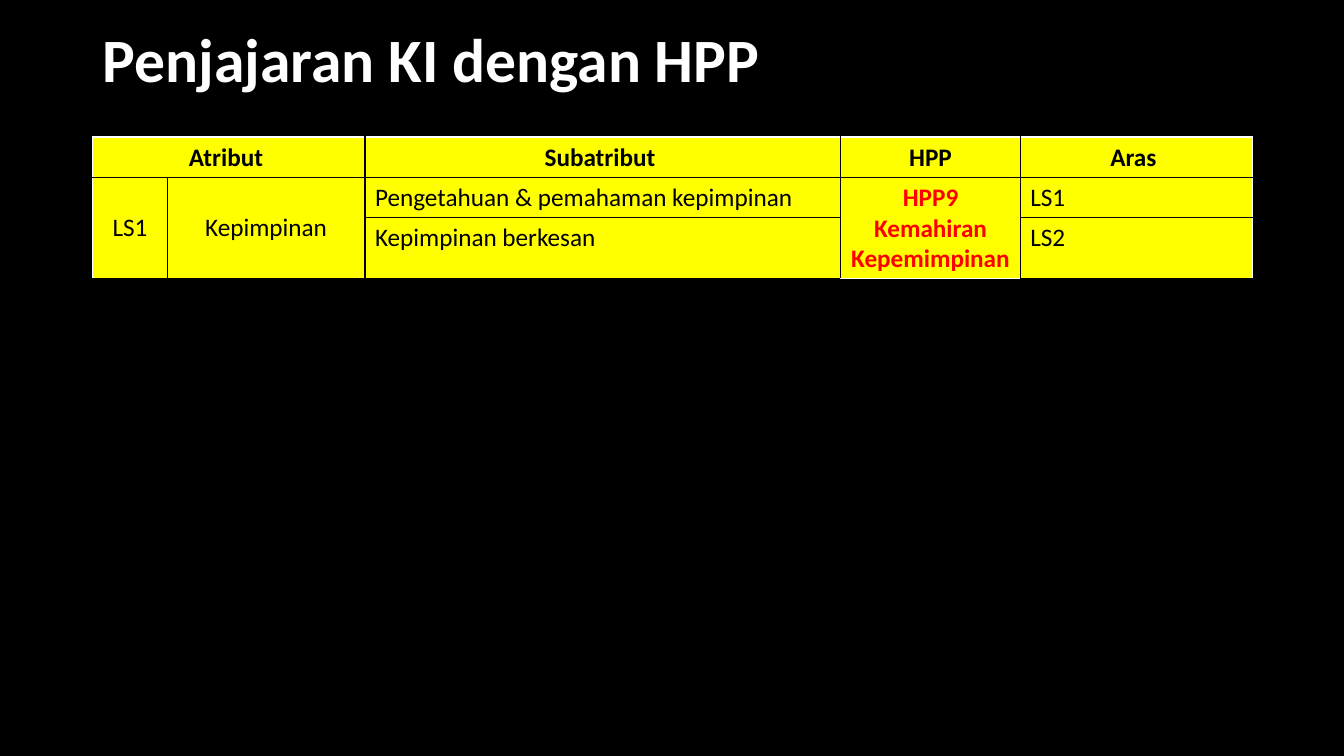
from dataclasses import dataclass

from lxml import etree
from pptx import Presentation
from pptx.dml.color import RGBColor as RGB
from pptx.enum.text import MSO_ANCHOR as Anchor, PP_ALIGN as Align
from pptx.oxml.ns import qn
from pptx.util import Inches, Pt


@dataclass(frozen=True)
class Theme:
    font: str = "Calibri"
    black: str = "000000"
    white: str = "FFFFFF"
    yellow: str = "FFFF00"
    red: str = "FF0000"
    title_size: int = 44
    cell_size: int = 18
    border: int = 1


THEME = Theme()


@dataclass(frozen=True)
class CellSpec:
    row: int
    col: int
    text: str
    rows: int = 1
    cols: int = 1
    bold: bool = False
    centred: bool = False
    color: str = THEME.black
    bottom: str = THEME.black


# The HPP column is just wide enough for "Kepemimpinan" on one line
COL_WIDTHS = (0.74, 1.96, 4.72, 1.78, 2.3)
ROW_HEIGHTS = (0.39, 0.38, 0.38)
CELLS = (
    CellSpec(0, 0, "Atribut ", cols=2, bold=True, centred=True),
    CellSpec(0, 2, "Subatribut ", bold=True, centred=True),
    CellSpec(0, 3, "HPP", bold=True, centred=True),
    CellSpec(0, 4, "Aras ", bold=True, centred=True),
    CellSpec(1, 0, "LS1", rows=2, centred=True),
    CellSpec(1, 1, "Kepimpinan", rows=2, centred=True),
    CellSpec(1, 2, "Pengetahuan & pemahaman kepimpinan"),
    CellSpec(1, 3, "HPP9\nKemahiran Kepemimpinan", rows=2, bold=True,
             centred=True, color=THEME.red, bottom=THEME.white),
    CellSpec(1, 4, "LS1"),
    CellSpec(2, 2, "Kepimpinan berkesan"),
    CellSpec(2, 4, "LS2"),
)


def style_text(tf, size: int, color: str, bold: bool, align: Align) -> None:
    for p in tf.paragraphs:
        p.alignment = align
        for r in p.runs:
            r.font.name, r.font.size, r.font.bold = THEME.font, Pt(size), bold
            r.font.color.rgb = RGB.from_string(color)


def set_borders(cell, colors: dict[str, str]) -> None:
    """Put the border lines ahead of the cell fill, as the schema asks."""
    tc_pr = cell._tc.get_or_add_tcPr()
    for i, (side, color) in enumerate(colors.items()):
        ln = etree.Element(qn(f"a:ln{side}"), w=str(Pt(THEME.border)))
        fill = etree.SubElement(ln, qn("a:solidFill"))
        etree.SubElement(fill, qn("a:srgbClr"), val=color)
        tc_pr.insert(i, ln)


def add_title(slide, text: str) -> None:
    sp = slide.shapes.add_textbox(Inches(0.92), Inches(0.15), Inches(11.5), Inches(0.94))
    tf = sp.text_frame
    tf.word_wrap = True
    tf.vertical_anchor = Anchor.MIDDLE
    tf.text = text
    tf.paragraphs[0].line_spacing = 0.9
    style_text(tf, THEME.title_size, THEME.white, True, Align.LEFT)


def fill_cell(table, spec: CellSpec) -> None:
    cell = table.cell(spec.row, spec.col)
    last_row, last_col = spec.row + spec.rows - 1, spec.col + spec.cols - 1
    if spec.rows * spec.cols > 1:
        cell.merge(table.cell(last_row, last_col))
    cell.text_frame.text = spec.text
    cell.vertical_anchor = Anchor.MIDDLE if spec.rows > 1 else Anchor.TOP
    style_text(cell.text_frame, THEME.cell_size, spec.color, spec.bold,
               Align.CENTER if spec.centred else Align.LEFT)

    # White along the left, top and right edges of the table, black inside
    def edge(outer: bool) -> str:
        return THEME.white if outer else THEME.black

    borders = {"L": edge(spec.col == 0), "R": edge(last_col == len(COL_WIDTHS) - 1),
               "T": edge(spec.row == 0), "B": spec.bottom}
    for row in range(spec.row, last_row + 1):
        for col in range(spec.col, last_col + 1):
            part = table.cell(row, col)
            part.fill.solid()
            part.fill.fore_color.rgb = RGB.from_string(THEME.yellow)
            set_borders(part, borders)


def add_alignment_table(slide) -> None:
    frame = slide.shapes.add_table(len(ROW_HEIGHTS), len(COL_WIDTHS), Inches(0.92),
                                   Inches(1.36), Inches(11.5), Inches(1.4))
    table = frame.table
    for column, width in zip(table.columns, COL_WIDTHS):
        column.width = Inches(width)
    for row, height in zip(table.rows, ROW_HEIGHTS):
        row.height = Inches(height)
    frame.height = Inches(1.4)
    for spec in CELLS:
        fill_cell(table, spec)


def main() -> None:
    prs = Presentation()
    prs.slide_width, prs.slide_height = Inches(13.33), Inches(7.5)
    slide = prs.slides.add_slide(prs.slide_layouts[6])

    # Black background
    bg = slide.background.fill
    bg.solid()
    bg.fore_color.rgb = RGB.from_string(THEME.black)

    # Title and table
    add_title(slide, "Penjajaran KI dengan HPP")
    add_alignment_table(slide)
    prs.save("out.pptx")


if __name__ == "__main__":
    main()
